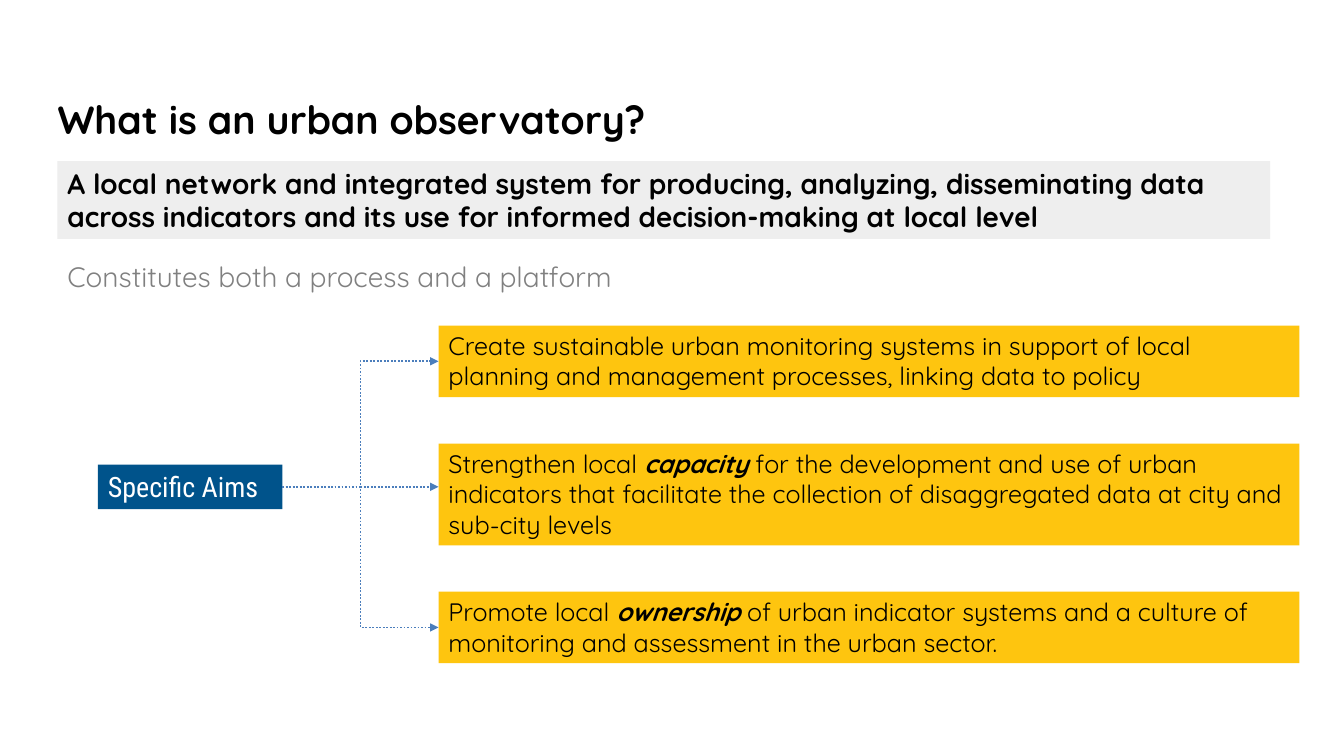
from lxml import etree
from pptx import Presentation
from pptx.dml.color import RGBColor
from pptx.enum.dml import MSO_LINE
from pptx.enum.shapes import MSO_CONNECTOR, MSO_SHAPE
from pptx.enum.text import MSO_ANCHOR, MSO_AUTO_SIZE, PP_ALIGN
from pptx.oxml.ns import qn
from pptx.util import Inches, Pt

RECTANGLE = MSO_SHAPE.RECTANGLE
ELBOW, STRAIGHT = MSO_CONNECTOR.ELBOW, MSO_CONNECTOR.STRAIGHT
DOTTED = MSO_LINE.ROUND_DOT
TOP, LEFT = MSO_ANCHOR.TOP, PP_ALIGN.LEFT
NO_FIT = MSO_AUTO_SIZE.NONE
LEFT_SIDE, RIGHT_SIDE = 1, 3

COLORS = {
    "ink": "000000",
    "muted": "808080",
    "white": "FFFFFF",
    "band": "EEEEEE",
    "aims": "00538B",
    "goal": "FEC50F",
    "arrow": "4B7EBC",
}
BODY_FONT = "Quicksand"
LABEL_FONT = "Roboto Condensed"

MARGIN = 4.28
GOAL_LEFT, GOAL_TOP, GOAL_WIDTH, GOAL_GAP = 32.63, 43.07, 64.05, 6.13
LINE_ROWS, PADDING_ROWS = 4, 1.47
GOALS = [
    (2, ["Create sustainable urban monitoring systems in support of local planning "
         "and management processes, linking data to policy"]),
    (3, ["Strengthen local ", "capacity ",
         "for the development and use of urban indicators that facilitate "
         "the collection of disaggregated data at city and sub-city levels"]),
    (2, ["Promote local ", "ownership",
         " of urban indicator systems and a culture of monitoring "
         "and assessment in the urban sector."]),
]


class ObservatorySlide:
    def __init__(self, deck):
        self.page = deck.slides.add_slide(deck.slide_layouts[5])
        self.column = deck.slide_width / 100
        self.row = deck.slide_height / 100

    def place(self, left, top, width, height):
        return (round(left * self.column), round(top * self.row),
                round(width * self.column), round(height * self.row))

    def color(self, name):
        return RGBColor.from_string(COLORS[name])

    def fill_text(self, box, parts, size, color, bold=False, font=BODY_FONT):
        frame = box.text_frame
        frame.word_wrap = True
        frame.auto_size = NO_FIT
        frame.vertical_anchor = TOP
        frame.text = parts[0]
        para = frame.paragraphs[0]
        para.alignment = LEFT
        for part in parts[1:]:
            para.add_run().text = part
        for index, span in enumerate(para.runs):
            emphasis = index % 2 == 1
            span.font.name = font
            span.font.size = Pt(size)
            span.font.bold = bold or emphasis
            span.font.italic = emphasis
            span.font.color.rgb = self.color(color)
        return para

    def title(self, text, area):
        box = self.page.shapes.title
        box.left, box.top, box.width, box.height = self.place(*area)
        para = self.fill_text(box, [text], 28, "ink", bold=True)
        para.line_spacing = Pt(35.4)
        frame = box.text_frame
        frame.margin_left = frame.margin_top = 0
        frame.margin_right = frame.margin_bottom = 0

    def text(self, text, area, size, color):
        box = self.page.shapes.add_textbox(*self.place(*area))
        self.fill_text(box, [text], size, color)

    def panel(self, parts, area, fill, size, color="ink", **style):
        box = self.page.shapes.add_shape(RECTANGLE, *self.place(*area))
        box.shadow.inherit = False
        box.fill.solid()
        box.fill.fore_color.rgb = self.color(fill)
        box.line.fill.background()
        self.fill_text(box, parts, size, color, **style)
        return box

    def arrow(self, kind, start=(0, 0), end=(0, 0)):
        link = self.page.shapes.add_connector(
            kind, *self.place(*start, *end))
        link.line.color.rgb = self.color("arrow")
        link.line.width = Pt(1.25)
        link.line.dash_style = DOTTED
        properties = link.element.spPr
        outline = properties.find(qn("a:ln"))
        etree.SubElement(outline, qn("a:tailEnd"), type="triangle")
        etree.SubElement(properties, qn("a:effectLst"))
        return link

    def branch(self, source, target):
        link = self.arrow(ELBOW)
        link.begin_connect(source, RIGHT_SIDE)
        link.end_connect(target, LEFT_SIDE)


def main():
    deck = Presentation()
    deck.slide_width, deck.slide_height = Inches(13.33), Inches(7.5)
    slide = ObservatorySlide(deck)

    slide.title("What is an urban observatory?", (MARGIN, 12.27, 75.3, 6.13))
    aims = slide.panel(["Specific Aims"], (7.28, 61.47, 13.73, 5.87), "aims", 20,
                       color="white", font=LABEL_FONT)
    slide.panel(["A local network and integrated system for producing, analyzing, "
                 "disseminating data across indicators and its use for informed "
                 "decision-making at local level"],
                (MARGIN, 21.33, 90.23, 10.27), "band", 20, bold=True)
    slide.text("Constitutes both a process and a platform",
               (MARGIN, 33.73, 61.58, 5.87), 20, "muted")

    goals = []
    top = GOAL_TOP
    for lines, parts in GOALS:
        height = lines * LINE_ROWS + PADDING_ROWS
        goals.append(slide.panel(parts, (GOAL_LEFT, top, GOAL_WIDTH, height),
                                 "goal", 18))
        top += height + GOAL_GAP

    slide.branch(aims, goals[0])
    slide.branch(aims, goals[2])
    slide.arrow(STRAIGHT, (26.82, 64.4), (GOAL_LEFT, 64.4))
    deck.save("out.pptx")


if __name__ == "__main__":
    main()
